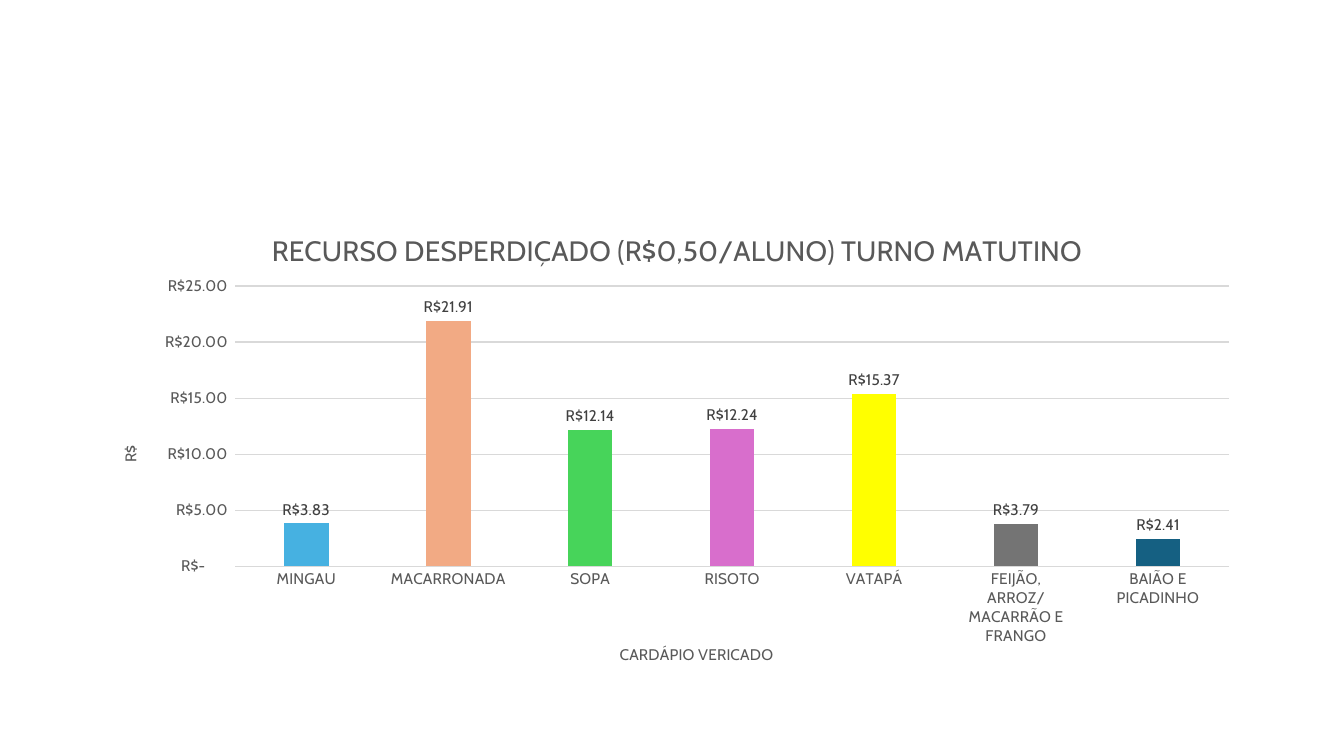
from lxml import etree
from pptx import Presentation
from pptx.chart.data import CategoryChartData as Data
from pptx.dml.color import RGBColor
from pptx.enum.chart import XL_CHART_TYPE as Kind, XL_LABEL_POSITION as Spot
from pptx.enum.chart import XL_TICK_MARK as Tick
from pptx.oxml.ns import qn
from pptx.util import Inches, Pt

BLUE = RGBColor(0x15, 0x60, 0x82)
GRAY = RGBColor(0x59, 0x59, 0x59)
DARK = RGBColor(0x40, 0x40, 0x40)
PALE = RGBColor(0xD9, 0xD9, 0xD9)
MEALS = [
    ("MINGAU", 3.83, RGBColor(0x46, 0xB1, 0xE1)),
    ("MACARRONADA", 21.91, RGBColor(0xF2, 0xAA, 0x84)),
    ("SOPA", 12.14, RGBColor(0x47, 0xD4, 0x5A)),
    ("RISOTO", 12.24, RGBColor(0xD8, 0x6E, 0xCC)),
    ("VATAPÁ", 15.37, RGBColor(0xFF, 0xFF, 0x00)),
    ("FEIJÃO, ARROZ/MACARRÃO E FRANGO", 3.79, RGBColor(0x74, 0x74, 0x74)),
    ("BAIÃO E PICADINHO", 2.41, BLUE),
]
TITLE = "RECURSO DESPERDIÇADO (R$0,50/ALUNO) TURNO MATUTINO"
MONEY = '_("R$"* #,##0.00_);_("R$"* \\(#,##0.00\\);_("R$"* "-"??_);_(@_)'
FONT = "Cabin"
BOX = (0.92, 2, 11.5, 4.76)
PLOT = (2.33, 2.84, 9.85, 2.78)
SPOTS = [(2.64, 2.24), (6.12, 6.36), (1.16, 4.39)]


def style(font, size, color):
    """Set the face, size and colour of a font."""
    font.name, font.size, font.bold = FONT, Pt(size), False
    font.color.rgb = color


def head(owner, text, size):
    """Give a chart or an axis its title."""
    frame = (owner.chart_title if hasattr(owner, "chart_title")
             else owner.axis_title).text_frame
    frame.text = text
    style(frame.paragraphs[0].font, size, GRAY)
    return frame


def place(node, box, inner=False):
    """Fix a chart part at a place given in slide inches."""
    lay = node.find(qn("c:layout"))
    if lay is None:
        lay = etree.Element(qn("c:layout"))
        tx = node.find(qn("c:tx"))
        node.insert(0 if tx is None else 1, lay)
    man = etree.SubElement(lay, qn("c:manualLayout"))
    left, top, wide, high = BOX
    parts = [((box[0] - left) / wide), ((box[1] - top) / high)]
    parts += [n / full for n, full in zip(box[2:], (wide, high))]
    rows = [("layoutTarget", "inner")] if inner else []
    rows += [("xMode", "edge"), ("yMode", "edge")]
    rows += [(key, f"{n:.3f}") for key, n in zip("xywh", parts)]
    for key, val in rows:
        etree.SubElement(man, qn(f"c:{key}")).set("val", val)


def build():
    """Build the slide with its column chart."""
    deck = Presentation()
    deck.slide_width, deck.slide_height = Inches(13.33), Inches(7.5)
    slide = deck.slides.add_slide(deck.slide_layouts[6])
    data = Data(number_format=MONEY)
    data.categories = [name for name, _, _ in MEALS]
    data.add_series("Series 1", [val for _, val, _ in MEALS])
    chart = slide.shapes.add_chart(
        Kind.COLUMN_CLUSTERED, *map(Inches, BOX), data).chart
    style(chart.font, 10, RGBColor(0, 0, 0))
    chart.has_legend = False
    head(chart, TITLE, 20)

    cat, val = chart.category_axis, chart.value_axis
    for axis, text in ((cat, "CARDÁPIO VERICADO"), (val, "R$")):
        frame = head(axis, text, 11)
        axis.major_tick_mark = axis.minor_tick_mark = Tick.NONE
        style(axis.tick_labels.font, 11, GRAY)
    body = frame._txBody.find(qn("a:bodyPr"))
    body.set("rot", "-5400000")
    body.set("vert", "horz")
    val.minimum_scale, val.maximum_scale, val.major_unit = 0, 25, 5
    val.tick_labels.number_format = MONEY
    val.tick_labels.number_format_is_linked = False
    val.format.line.fill.background()
    cat.has_major_gridlines = False
    for line in (cat.format.line, val.major_gridlines.format.line):
        line.color.rgb, line.width = PALE, Pt(0.75)

    plot = chart.plots[0]
    plot.gap_width, plot.overlap = 219, -27
    plot.vary_by_categories = False
    bars = plot.series[0]
    bars.format.fill.solid()
    bars.format.fill.fore_color.rgb = BLUE
    for i, (_, _, color) in enumerate(MEALS):
        fill = bars.points[i].format.fill
        fill.solid()
        fill.fore_color.rgb = color
    tags = bars.data_labels
    tags.show_value, tags.position = True, Spot.OUTSIDE_END
    tags.number_format, tags.number_format_is_linked = MONEY, False
    style(tags.font, 11, DARK)

    root = chart.element
    place(next(root.iter(qn("c:plotArea"))), PLOT, True)
    for node, spot in zip(root.iter(qn("c:title")), SPOTS):
        place(node, spot)
    deck.save("out.pptx")


if __name__ == "__main__":
    build()
